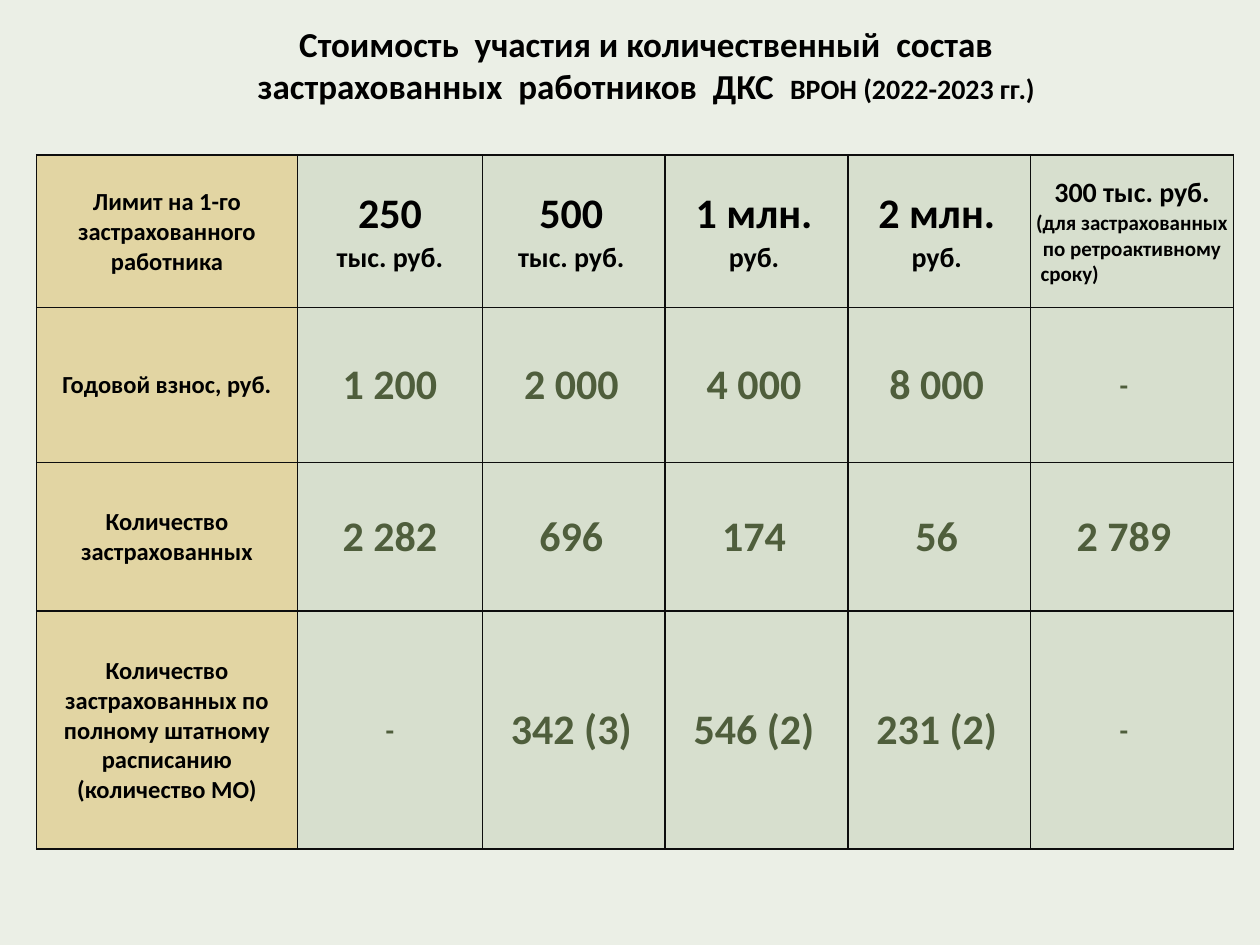
"""Build a slide with a table of insurance limits, fees and counts."""
import pptx
import pptx.util
import pptx.dml.color
import pptx.enum.text
import pptx.oxml.ns
import lxml.etree

Pt, Inches = pptx.util.Pt, pptx.util.Inches
Align = pptx.enum.text.PP_ALIGN
Anchor = pptx.enum.text.MSO_ANCHOR
HUES = {"back": "EBEFE6", "head": "E2D5A3", "cell": "D7DFCE",
        "text": "000000", "value": "4F5E3C", "line": "0D0D0D"}
WIDE, HIGH = 10, 7.5


def style(run, size, hue):
    font = run.font
    font.name, font.size, font.bold = "Calibri", Pt(size), True
    font.color.rgb = pptx.dml.color.RGBColor.from_string(HUES[hue])


def border(cell):
    props = cell._tc.get_or_add_tcPr()
    for spot, side in enumerate(("lnL", "lnR", "lnT", "lnB")):
        line = lxml.etree.Element(pptx.oxml.ns.qn("a:" + side), w=str(Pt(1)))
        fill = lxml.etree.SubElement(line, pptx.oxml.ns.qn("a:solidFill"))
        lxml.etree.SubElement(fill, pptx.oxml.ns.qn("a:srgbClr"), val=HUES["line"])
        props.insert(spot, line)


deck = pptx.Presentation()
deck.slide_width, deck.slide_height = Inches(WIDE), Inches(HIGH)
slide = deck.slides.add_slide(deck.slide_layouts[5])
back = slide.background.fill
back.solid()
back.fore_color.rgb = pptx.dml.color.RGBColor.from_string(HUES["back"])

title = slide.shapes.title
title.left, title.top = Inches(0.03 * WIDE), Inches(0.13)
title.width, title.height = Inches(0.966 * WIDE), Inches(0.77)
frame = title.text_frame
frame.auto_size = pptx.enum.text.MSO_AUTO_SIZE.NONE
frame.vertical_anchor = Anchor.TOP
frame.text = ("Стоимость  участия и количественный  состав\n"
              "застрахованных  работников  ДКС  ")
frame.paragraphs[1].add_run().text = "ВРОН (2022-2023 гг.)"
for para in frame.paragraphs:
    para.alignment = Align.CENTER
    for num, run in enumerate(para.runs):
        style(run, 16 if num else 20, "text")

COLS = [2.07, 1.47, 1.45, 1.45, 1.45, 1.61]
ROWS = [1.21, 1.23, 1.18, 1.89]
DATA = [
    ["Лимит на 1-го застрахованного работника", "250\nтыс. руб.", "500\nтыс. руб.",
     "1 млн.\nруб.", "2 млн.\nруб.",
     "300 тыс. руб.\n(для застрахованных\nпо ретроактивному\nсроку)"],
    ["Годовой взнос, руб.", "1 200", "2 000", "4 000", "8 000", "-"],
    ["Количество застрахованных", "2 282", "696", "174", "56", "2 789"],
    ["Количество застрахованных по полному штатному расписанию\n(количество МО)",
     "-", "342 (3)", "546 (2)", "231 (2)", "-"],
]
LAST = len(COLS) - 1
table = slide.shapes.add_table(
    len(ROWS), len(COLS), Inches(0.029 * WIDE), Inches(1.23),
    Inches(sum(COLS)), Inches(sum(ROWS))).table
for col, width in zip(table.columns, COLS):
    col.width = Inches(width)
for row, height in zip(table.rows, ROWS):
    row.height = Inches(height)

for r, items in enumerate(DATA):
    for c, words in enumerate(items):
        cell = table.cell(r, c)
        cell.fill.solid()
        cell.fill.fore_color.rgb = pptx.dml.color.RGBColor.from_string(
            HUES["cell" if c else "head"])
        border(cell)
        cell.vertical_anchor = Anchor.MIDDLE
        cell.margin_left = cell.margin_top = cell.margin_right = Inches(0.01)
        cell.margin_bottom = 0
        if c > 1 and (r or c < LAST):
            cell.margin_right = Inches(0.14 if c == LAST else 0.05)
        cell.text_frame.text = words
        for num, para in enumerate(cell.text_frame.paragraphs):
            para.alignment = Align.CENTER
            if c == 0:
                size = 14
            elif r == 0 and c == LAST:
                size = 12 if num else 16
            else:
                size = 16 if num or words == "-" else 24
            style(para.runs[0], size, "value" if r and c else "text")

tail = table.cell(0, LAST).text_frame.paragraphs[-1]
tail.alignment = Align.LEFT
tail._p.get_or_add_pPr().set("marL", str(Inches(0.07)))

deck.save("out.pptx")
